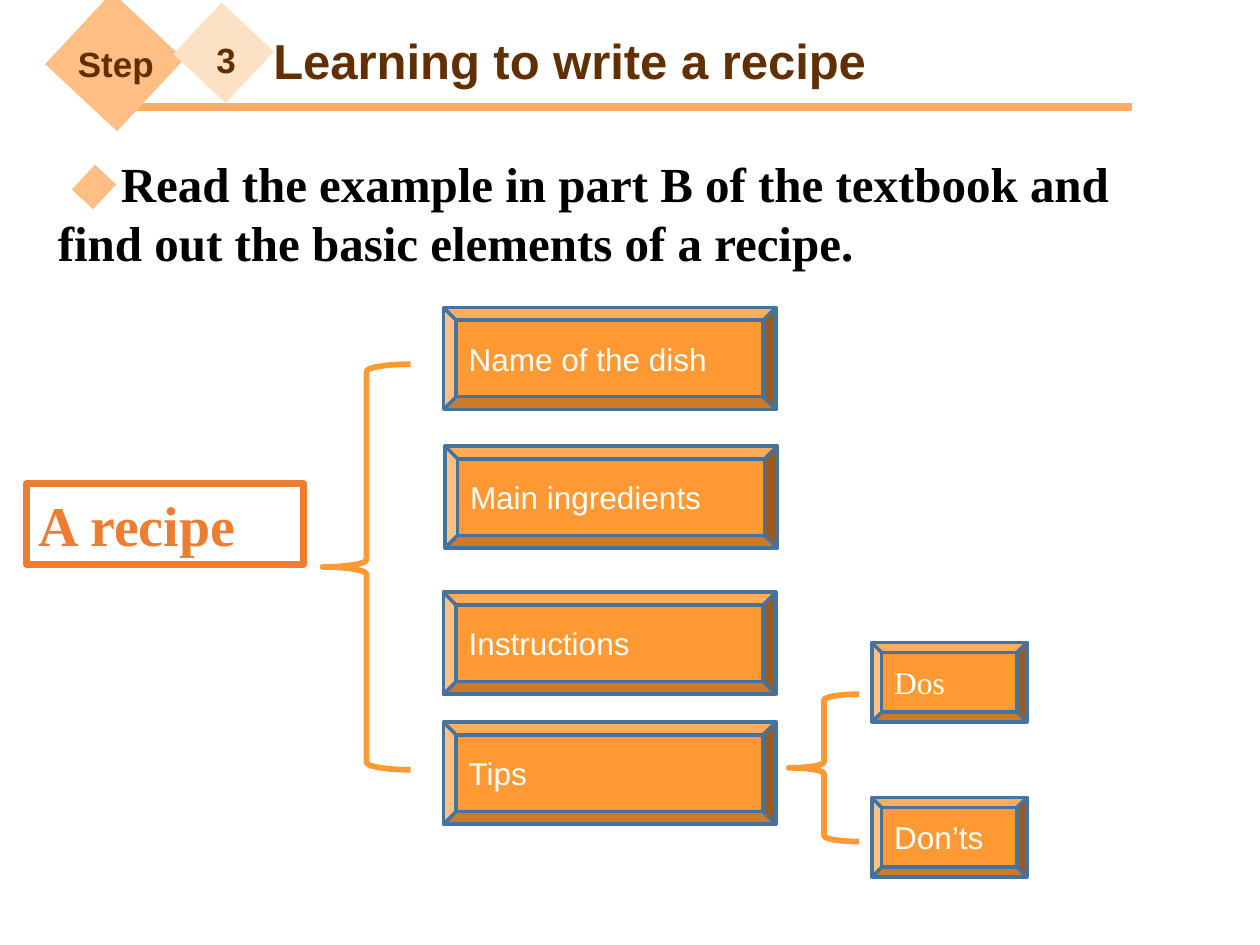
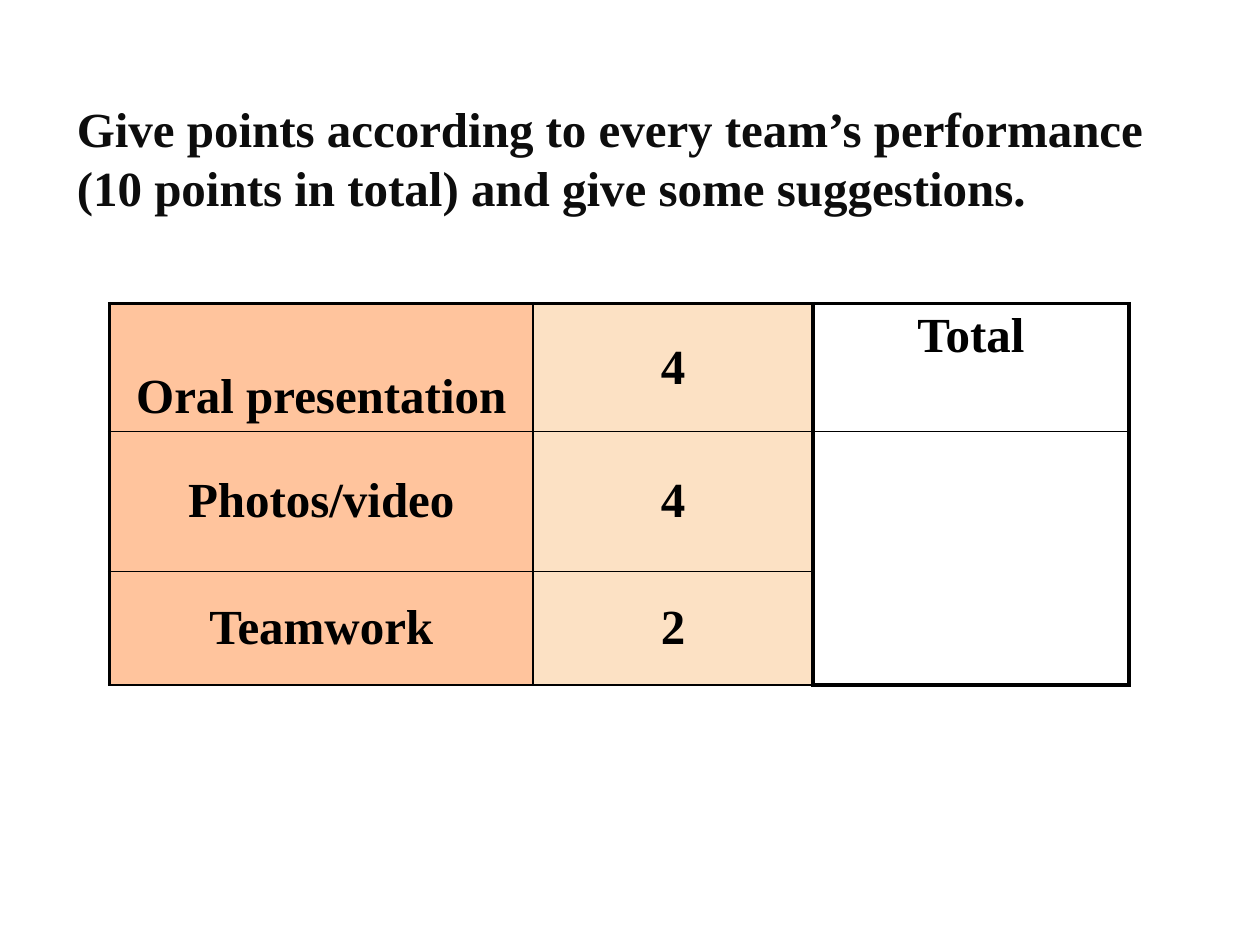
import pptx
import pptx.util
import pptx.dml.color
import pptx.enum.shapes
import pptx.enum.text
import pptx.oxml
import pptx.oxml.ns

Pt = pptx.util.Pt
SHAPE = pptx.enum.shapes.MSO_SHAPE
ANCHOR = pptx.enum.text.MSO_ANCHOR
ALIGN = pptx.enum.text.PP_ALIGN

COLORS = {
    "black": "000000",
    "ink": "0D0D0D",
    "white": "FFFFFF",
    "brown": "612F02",
    "rule": "FCAC64",
    "diamond": "FFBE83",
    "pale": "FCE1C4",
    "peach": "FFC49D",
    "orange": "FF9933",
    "frame": "ED7D31",
    "edge": "43739E",
}
SANS = "Arial"
SERIF = "Times New Roman"


def rgb(color):
    return pptx.dml.color.RGBColor.from_string(COLORS[color])


def write(frame, text, size, font, color, bold=False, anchor=ANCHOR.TOP,
          align=ALIGN.LEFT, indent=0):
    frame.word_wrap = True
    frame.auto_size = pptx.enum.text.MSO_AUTO_SIZE.NONE
    frame.vertical_anchor = anchor
    frame.text = text
    paragraph = frame.paragraphs[0]
    paragraph.alignment = align
    if indent:
        properties = paragraph._p.get_or_add_pPr()
        properties.set("marL", "0")
        properties.set("indent", str(Pt(indent)))
    paragraph.font.size = Pt(size)
    paragraph.font.name = font
    paragraph.font.bold = bold
    paragraph.font.color.rgb = rgb(color)


def add_title_page(deck, title, place, font, color):
    page = deck.slides.add_slide(deck.slide_layouts[5])
    box = page.shapes.title
    box.left, box.top, box.width, box.height = map(Pt, place)
    write(box.text_frame, title, 28, font, color, bold=True)
    return page


def add_label(page, place, text, size, font, color, indent=0):
    box = page.shapes.add_textbox(*map(Pt, place))
    box.text_frame.margin_right = 0
    write(box.text_frame, text, size, font, color, bold=True, indent=indent)


def add_figure(page, kind, place, fill=None, line=None, width=0):
    shape = page.shapes.add_shape(kind, *map(Pt, place))
    shape.shadow.inherit = False
    if fill:
        shape.fill.solid()
        shape.fill.fore_color.rgb = rgb(fill)
    else:
        shape.fill.background()
    if line:
        shape.line.color.rgb = rgb(line)
        shape.line.width = Pt(width)
    else:
        shape.line.fill.background()
    return shape


def add_diamond(page, place, fill):
    add_figure(page, SHAPE.RECTANGLE, place, fill).rotation = 43


def add_button(page, place, text, font=SANS):
    button = add_figure(page, SHAPE.BEVEL, place, "orange", "edge", 2)
    write(button.text_frame, text, 18, font, "white", anchor=ANCHOR.MIDDLE)


def add_brace(page, place):
    add_figure(page, SHAPE.LEFT_BRACE, place, line="orange", width=3.25)


def add_rule(page, left, right, y):
    rule = page.shapes.add_connector(
        pptx.enum.shapes.MSO_CONNECTOR.STRAIGHT, Pt(left), Pt(y), Pt(right), Pt(y))
    rule.line.color.rgb = rgb("rule")
    rule.line.width = Pt(4.5)
    properties = rule._element.spPr
    properties.append(pptx.oxml.parse_xml(
        f"<a:effectLst {pptx.oxml.ns.nsdecls('a')}/>"))


def set_borders(cell, widths):
    properties = cell._tc.get_or_add_tcPr()
    for side, width in widths.items():
        properties.append(pptx.oxml.parse_xml(
            f'<a:ln{side} {pptx.oxml.ns.nsdecls("a")} w="{Pt(width)}">'
            f'<a:solidFill><a:srgbClr val="{COLORS["black"]}"/></a:solidFill>'
            f'</a:ln{side}>'))


def add_score_table(page, left, top, column_widths, row_heights, rows):
    table = page.shapes.add_table(
        len(rows), len(column_widths), Pt(left), Pt(top),
        Pt(sum(column_widths)), Pt(sum(row_heights))).table
    table.first_row = table.horz_banding = False
    for column, width in zip(table.columns, column_widths):
        column.width = Pt(width)
    for row, height in zip(table.rows, row_heights):
        row.height = Pt(height)
    fills = ("peach", "pale", None)
    for i, texts in enumerate(rows):
        for j, text in enumerate(texts):
            cell = table.cell(i, j)
            heavy = {"L": j != 1, "R": j != 0, "T": i == 0, "B": j == 2 and i > 0}
            set_borders(cell, {side: 2.25 if thick else 1
                               for side, thick in heavy.items()})
            if fills[j]:
                cell.fill.solid()
                cell.fill.fore_color.rgb = rgb(fills[j])
            else:
                cell.fill.background()
            cell.margin_left = cell.margin_right = Pt(5)
            cell.margin_top = cell.margin_bottom = Pt(3)
            cell.vertical_anchor = ANCHOR.TOP if j == 2 else ANCHOR.MIDDLE
            if text:
                cell.text = text
                paragraph = cell.text_frame.paragraphs[0]
                paragraph.alignment = ALIGN.CENTER
                paragraph.font.size = Pt(28)
                paragraph.font.name = SERIF
                paragraph.font.bold = True
                paragraph.font.color.rgb = rgb("black")
    table.cell(0, 0).vertical_anchor = ANCHOR.BOTTOM
    table.cell(0, 0).margin_bottom = Pt(4.5)
    table.cell(1, 2).merge(table.cell(2, 2))


def add_recipe_page(deck):
    page = add_title_page(deck, "Learning to write a recipe",
                          (149, 13.7, 482, 41), SANS, "brown")
    add_label(page, (26, 84.2, 640, 75),
              "Read the example in part B of the textbook and find out "
              "the basic elements of a recipe.", 28, SERIF, "black", indent=36)
    add_rule(page, 73.4, 646.6, 61.2)
    add_diamond(page, (37.4, 7.2, 56.2, 56.2), "diamond")
    add_diamond(page, (107.3, 10.1, 41, 40.3), "pale")
    add_label(page, (116.6, 18.7, 25.2, 31.7), "3", 20, SANS, "brown")
    add_label(page, (37.4, 20.9, 57.6, 31.7), "Step", 20, SANS, "brown")
    add_diamond(page, (45.4, 97.2, 16.6, 19.4), "diamond")

    recipe = add_figure(page, SHAPE.RECTANGLE, (15.1, 276.5, 158.4, 46),
                        line="frame", width=4)
    write(recipe.text_frame, "A recipe", 32, SERIF, "frame", bold=True)

    elements = (
        ("Name of the dish", 253.4, 175.7),
        ("Main ingredients", 254.2, 254.9),
        ("Instructions", 253.4, 338.4),
        ("Tips", 253.4, 412.6),
    )
    for text, left, top in elements:
        add_button(page, (left, top, 190, 58.3), text)
    add_brace(page, (184.3, 208.1, 50.4, 231.8))
    add_brace(page, (450.7, 396.7, 40.3, 84.2))
    for text, top, font in (("Dos", 367.2, SERIF), ("Don’ts", 455.8, SANS)):
        add_button(page, (498.2, top, 88.6, 45.4), text, font)


def add_scoring_page(deck):
    page = add_title_page(
        deck, "Give points according to every team’s performance "
        "(10 points in total) and give some suggestions.",
        (36.7, 52.6, 630, 75), SERIF, "ink")
    add_score_table(page, 62.6, 173.5, (242, 160, 180.5), (73, 80, 65), (
        ("Oral presentation", "4", "Total"),
        ("Photos/video", "4", ""),
        ("Teamwork", "2", ""),
    ))


def main():
    deck = pptx.Presentation()
    deck.slide_width, deck.slide_height = Pt(720), Pt(540)
    add_recipe_page(deck)
    add_scoring_page(deck)
    deck.save("out.pptx")


if __name__ == "__main__":
    main()
